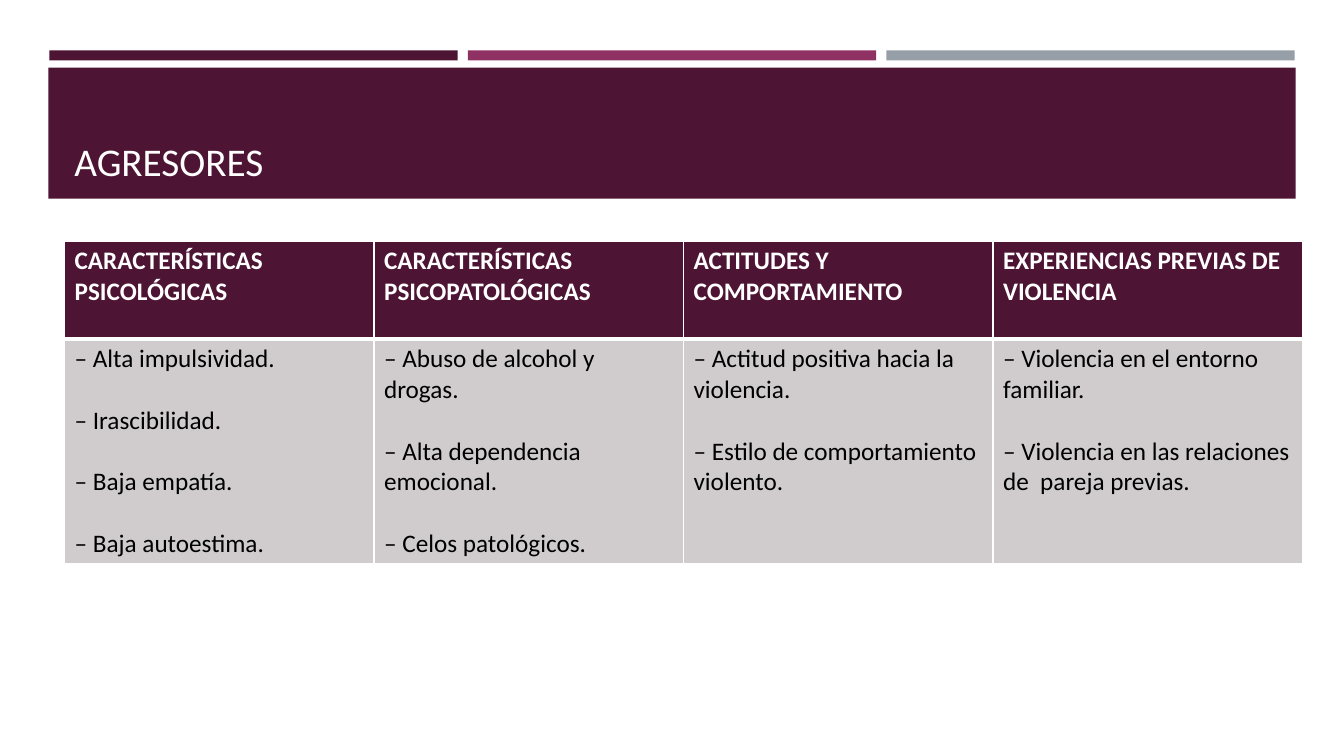
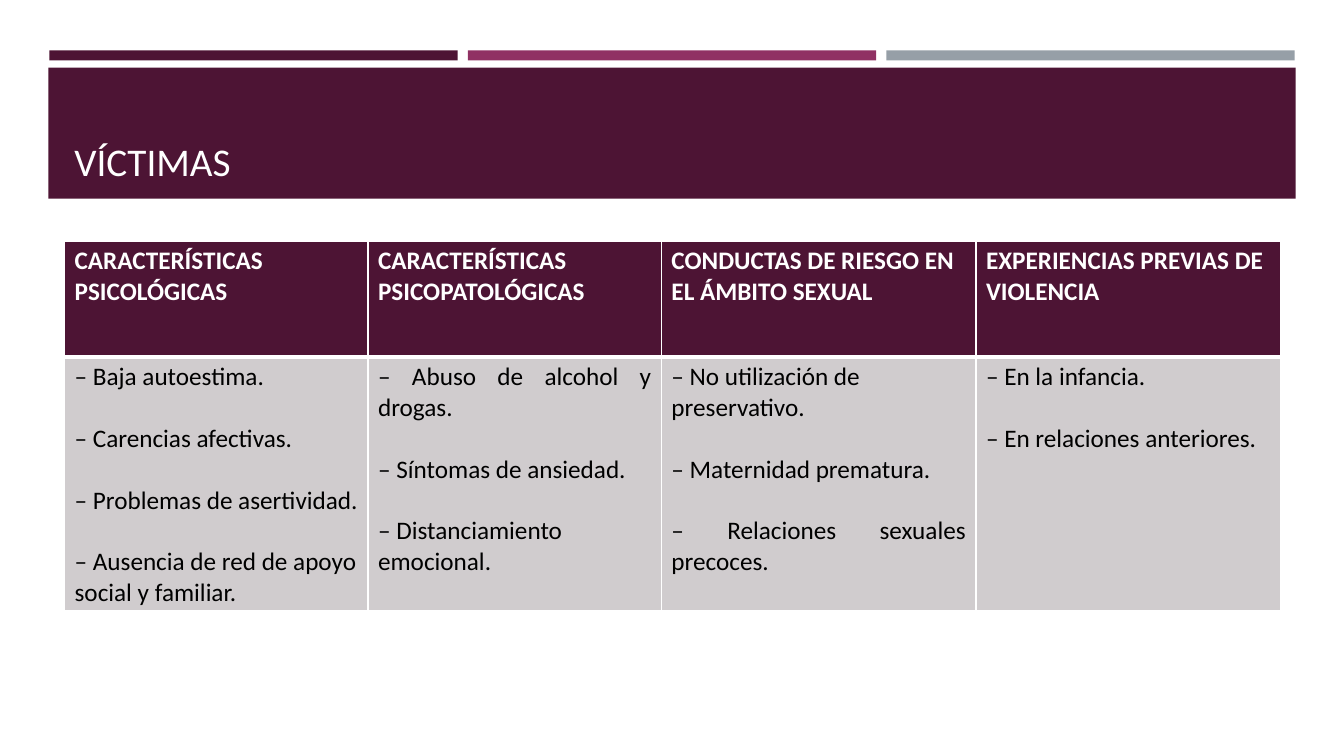
"""Builds two slides that compare the traits of aggressors and victims in tables."""
from dataclasses import dataclass

from lxml import etree
from pptx import Presentation
from pptx.dml.color import RGBColor
from pptx.enum.shapes import MSO_SHAPE
from pptx.enum.text import MSO_ANCHOR, PP_ALIGN
from pptx.oxml.ns import qn
from pptx.util import Inches, Pt

RECT = MSO_SHAPE.RECTANGLE
BOTTOM = MSO_ANCHOR.BOTTOM
LEFT, JUSTIFY = PP_ALIGN.LEFT, PP_ALIGN.JUSTIFY


@dataclass(frozen=True)
class Theme:
    font: str = "Calibri"
    plum: str = "4D1434"
    magenta: str = "903163"
    slate: str = "969FA7"
    body_fill: str = "D0CCCE"
    white: str = "FFFFFF"
    black: str = "000000"
    title_size: int = 28
    table_size: int = 18
    item_gap: int = 22
    thin: int = 1
    thick: int = 3


THEME = Theme()

SLIDES = [
    {
        "title": "AGRESORES",
        "widths": [3.07, 3.07, 3.07, 3.07],
        "heights": [0.97, 2.23],
        "justified": [],
        "columns": [
            ("CARACTERÍSTICAS PSICOLÓGICAS",
             ["– Alta impulsividad.", "– Irascibilidad.", "– Baja empatía.",
              "– Baja autoestima."]),
            ("CARACTERÍSTICAS PSICOPATOLÓGICAS",
             ["– Abuso de alcohol y drogas.", "– Alta dependencia emocional.",
              "– Celos patológicos."]),
            ("ACTITUDES Y COMPORTAMIENTO",
             ["– Actitud positiva hacia la violencia.",
              "– Estilo de comportamiento violento."]),
            ("EXPERIENCIAS PREVIAS DE VIOLENCIA",
             ["– Violencia en el entorno familiar.",
              "– Violencia en las relaciones de  pareja previas."]),
        ],
    },
    {
        "title": "VÍCTIMAS",
        "widths": [3.01, 2.91, 3.12, 3.02],
        "heights": [1.15, 2.5],
        "justified": ["– Abuso de alcohol y drogas.", "– Síntomas de ansiedad.",
                      "– Relaciones sexuales precoces."],
        "columns": [
            ("CARACTERÍSTICAS PSICOLÓGICAS",
             ["– Baja autoestima.", "– Carencias afectivas.",
              "– Problemas de asertividad.",
              "– Ausencia de red de apoyo social y familiar."]),
            ("CARACTERÍSTICAS PSICOPATOLÓGICAS",
             ["– Abuso de alcohol y drogas.", "– Síntomas de ansiedad.",
              "– Distanciamiento emocional."]),
            ("CONDUCTAS DE RIESGO EN EL ÁMBITO SEXUAL",
             ["– No utilización de preservativo.", "– Maternidad prematura.",
              "– Relaciones sexuales precoces."]),
            ("EXPERIENCIAS PREVIAS DE VIOLENCIA",
             ["– En la infancia.", "– En relaciones anteriores."]),
        ],
    },
]


def rgb(color):
    return RGBColor.from_string(color)


def style_paragraph(p, size, color, bold=False):
    for r in p.runs:
        r.font.name = THEME.font
        r.font.size = Pt(size)
        r.font.bold = bold
        r.font.color.rgb = rgb(color)


def add_band(s, left, top, width, height, color):
    sp = s.shapes.add_shape(RECT, Inches(left), Inches(top), Inches(width), Inches(height))
    sp.shadow.inherit = False
    sp.fill.solid()
    sp.fill.fore_color.rgb = rgb(color)
    sp.line.fill.background()


def add_header(s, title):
    for i, color in enumerate([THEME.plum, THEME.magenta, THEME.slate]):
        add_band(s, 0.49 + i * 4.15, 0.5, 4.05, 0.1, color)
    add_band(s, 0.48, 0.67, 12.37, 1.3, THEME.plum)
    box = s.shapes.add_textbox(Inches(0.64), Inches(0.77), Inches(12.06), Inches(1.11))
    tf = box.text_frame
    tf.word_wrap = True
    tf.vertical_anchor = BOTTOM
    tf.text = title
    style_paragraph(tf.paragraphs[0], THEME.title_size, THEME.white)


def add_borders(cell, top, bottom):
    tc_pr = cell._tc.get_or_add_tcPr()
    sides = {"a:lnL": THEME.thin, "a:lnR": THEME.thin, "a:lnT": top, "a:lnB": bottom}
    for tag, width in sides.items():
        ln = etree.SubElement(tc_pr, qn(tag), w=str(Pt(width)))
        fill = etree.SubElement(ln, qn("a:solidFill"))
        etree.SubElement(fill, qn("a:srgbClr"), val=THEME.white)


def fill_cell(cell, items, fill, color, bold, justified):
    cell.fill.solid()
    cell.fill.fore_color.rgb = rgb(fill)
    tf = cell.text_frame
    tf.text = "\n".join(items)
    for i, p in enumerate(tf.paragraphs):
        p.alignment = JUSTIFY if p.text in justified else LEFT
        p.space_before = Pt(THEME.item_gap if i else 0)
        style_paragraph(p, THEME.table_size, color, bold)


def add_traits_table(s, data):
    widths, heights = data["widths"], data["heights"]
    frame = s.shapes.add_table(len(heights), len(widths), Inches(0.64), Inches(2.39),
                               Inches(sum(widths)), Inches(sum(heights)))
    table = frame.table
    table.horz_banding = False
    for row, height in zip(table.rows, heights):
        row.height = Inches(height)
    for i, (heading, traits) in enumerate(data["columns"]):
        table.columns[i].width = Inches(widths[i])
        head, body = table.cell(0, i), table.cell(1, i)
        add_borders(head, THEME.thin, THEME.thick)
        add_borders(body, THEME.thick, THEME.thin)
        fill_cell(head, [heading], THEME.plum, THEME.white, True, [])
        fill_cell(body, traits, THEME.body_fill, THEME.black, False, data["justified"])


def main():
    prs = Presentation()
    prs.slide_width, prs.slide_height = Inches(13.33), Inches(7.5)
    for data in SLIDES:
        s = prs.slides.add_slide(prs.slide_layouts[6])
        add_header(s, data["title"])
        add_traits_table(s, data)
    prs.save("out.pptx")


if __name__ == "__main__":
    main()
